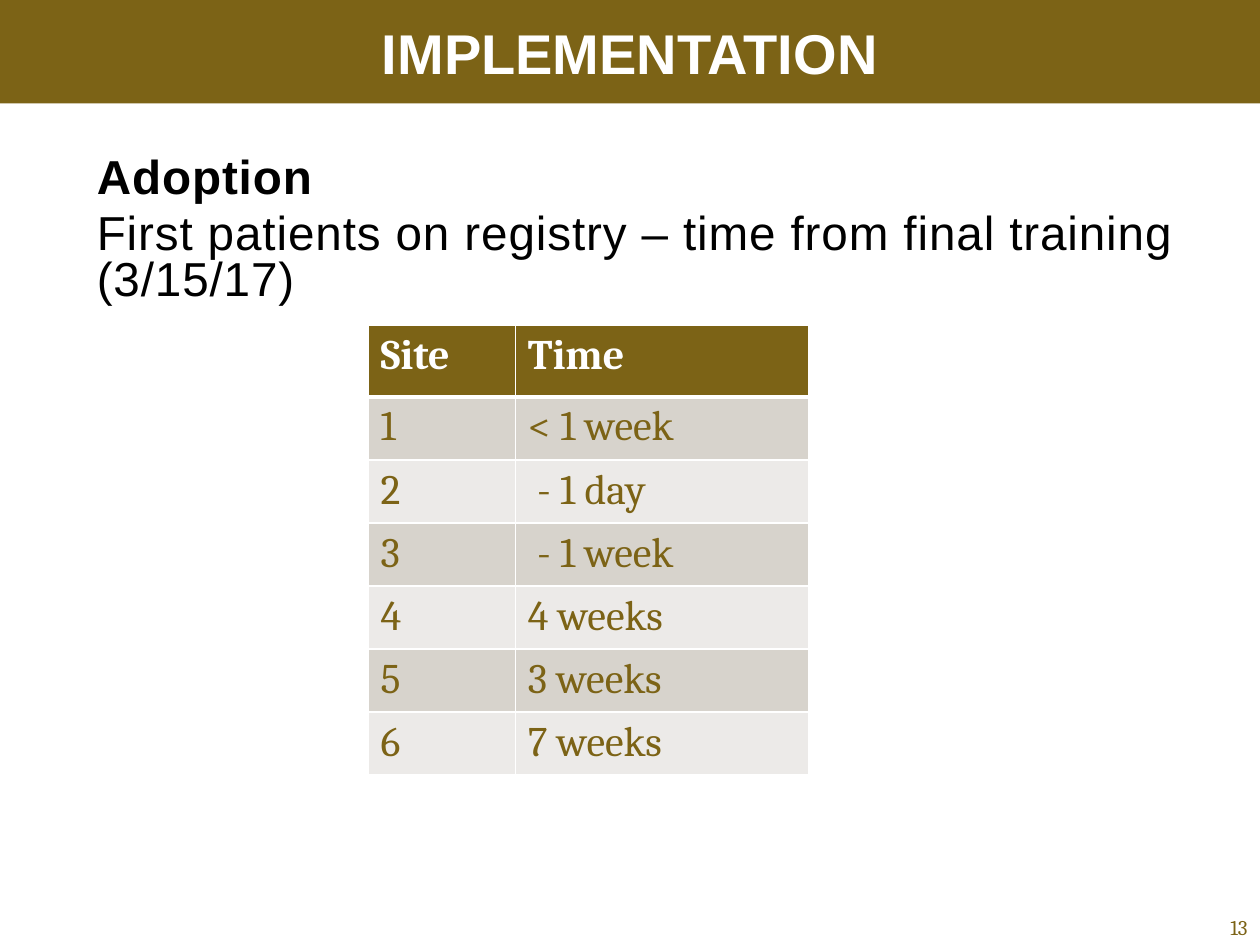
from lxml.etree import SubElement
from pptx import Presentation
from pptx.dml.color import RGBColor
from pptx.enum.shapes import MSO_SHAPE as Shape
from pptx.enum.text import MSO_ANCHOR as Anchor, PP_ALIGN as Align
from pptx.oxml.ns import qn
from pptx.util import Inches, Pt

GOLD, WHITE, BLACK = "7C6316", "FFFFFF", "000000"
BANDS = ["D7D3CC", "ECEAE8"]


def color(value):
    return RGBColor.from_string(value)


def write(frame, para, text, font, para_format={}, frame_format={}):
    for name, value in frame_format.items():
        setattr(frame, name, value)
    for name, value in para_format.items():
        setattr(para, name, value)
    span = para.add_run()
    span.text = text
    for name, value in font.items():
        if name == "color":
            span.font.color.rgb = color(value)
        else:
            setattr(span.font, name, value)
    return span


deck = Presentation()
deck.slide_width, deck.slide_height = Inches(10), Inches(7.5)
page = deck.slides.add_slide(deck.slide_layouts[5])

band = page.shapes.add_shape(Shape.RECTANGLE, 0, 0, Inches(10), Inches(0.82))
band.shadow.inherit = False
band.fill.solid()
band.fill.fore_color.rgb = color(GOLD)
band.line.fill.background()
page.shapes._spTree.insert(2, band._element)

no_margins = dict(margin_left=0, margin_top=0, margin_right=0, margin_bottom=0, word_wrap=True)

title = page.shapes.title
title.left, title.top, title.width, title.height = Inches(0.5), 0, Inches(9), Inches(0.83)
write(title.text_frame, title.text_frame.paragraphs[0], "IMPLEMENTATION",
      dict(name="Arial", size=Pt(32), bold=True, color=WHITE),
      dict(alignment=Align.CENTER),
      {**no_margins, "vertical_anchor": Anchor.MIDDLE})

body = page.shapes.add_textbox(Inches(0.67), Inches(1.25), Inches(8.67), Inches(1.33)).text_frame
lines = [("Adoption", True),
         ("First patients on registry – time from final training (3/15/17)", False)]
for index, (text, bold) in enumerate(lines):
    para = body.add_paragraph() if index else body.paragraphs[0]
    span = write(body, para, text,
                 dict(name="Arial", size=Pt(27.2), bold=bold, color=BLACK),
                 dict(line_spacing=0.8, space_after=Pt(6)),
                 {**no_margins, "margin_left": Inches(0.1)})
    span._r.get_or_add_rPr().set("spc", "50")

number = page.shapes.add_textbox(Inches(9.25), Inches(7.25), Inches(0.75), Inches(0.26)).text_frame
write(number, number.paragraphs[0], "13",
      dict(name="Cambria", size=Pt(12), color=GOLD),
      dict(alignment=Align.RIGHT),
      {**no_margins, "margin_right": Inches(0.1), "margin_bottom": Inches(0.05),
       "vertical_anchor": Anchor.BOTTOM})

rows = [("Site", "Time"), ("1", "< 1 week"), ("2", " - 1 day"), ("3", " - 1 week"),
        ("4", "4 weeks"), ("5", "3 weeks"), ("6", "7 weeks")]
table = page.shapes.add_table(len(rows), 2, Inches(2.92), Inches(2.58),
                              Inches(3.5), Inches(3.33)).table
for column, width in zip(table.columns, [1.17, 2.33]):
    column.width = Inches(width)
for row_index, values in enumerate(rows):
    header = row_index == 0
    table.rows[row_index].height = Inches(0.57 if header else 0.46)
    for column_index, text in enumerate(values):
        cell = table.cell(row_index, column_index)
        write(cell.text_frame, cell.text_frame.paragraphs[0], text,
              dict(name="Cambria", size=Pt(24), bold=header, color=WHITE if header else GOLD))
        for side in ["lnL", "lnR", "lnT", "lnB"]:
            thick = (row_index, side) in [(0, "lnB"), (1, "lnT")]
            border = SubElement(cell._tc.get_or_add_tcPr(), qn(f"a:{side}"),
                                w=str(Pt(3 if thick else 1)))
            SubElement(SubElement(border, qn("a:solidFill")), qn("a:srgbClr"), val=WHITE)
        cell.fill.solid()
        cell.fill.fore_color.rgb = color(GOLD if header else BANDS[(row_index - 1) % 2])

deck.save("out.pptx")
